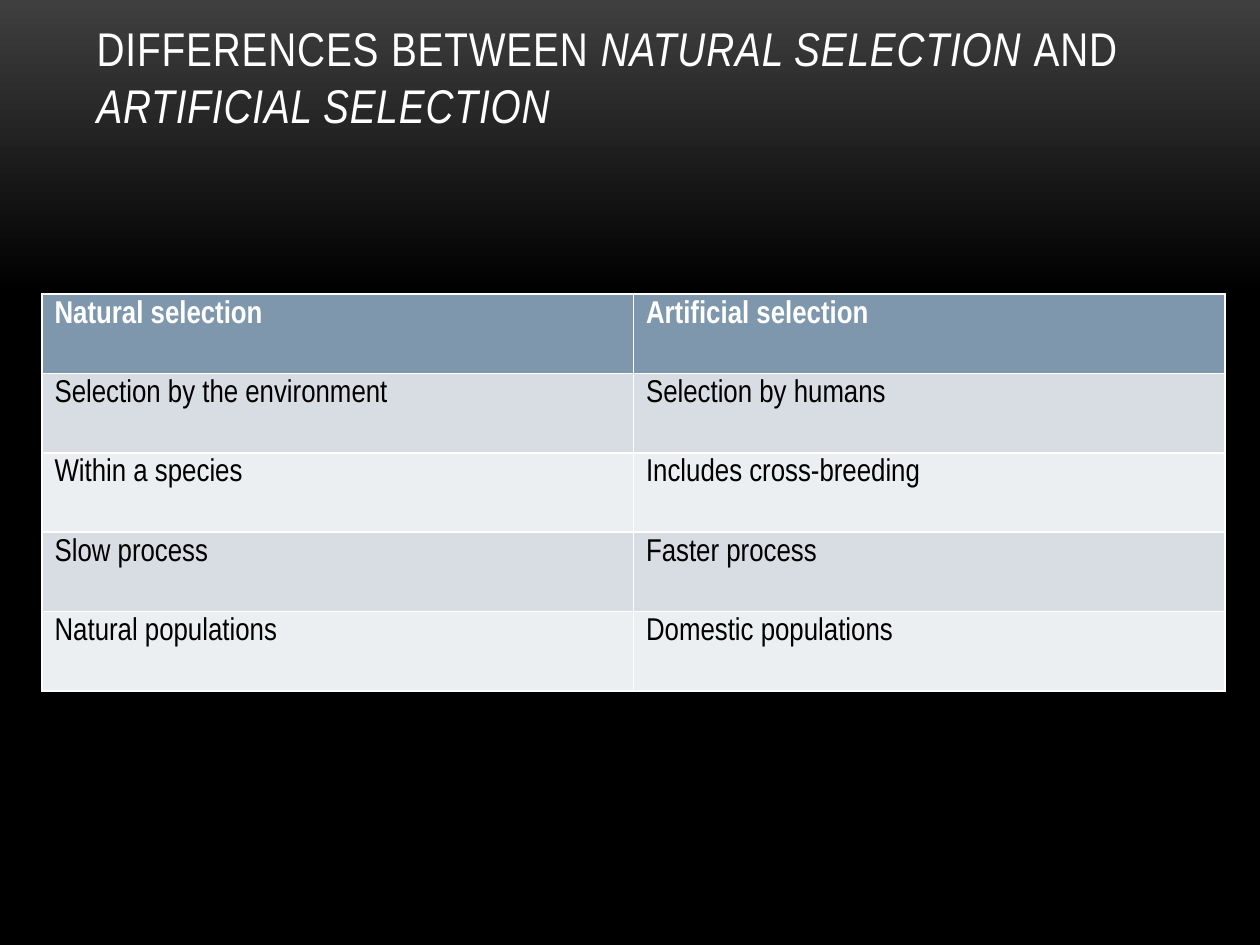
from lxml import etree
from pptx import Presentation
from pptx.dml.color import RGBColor
from pptx.enum import text
from pptx.oxml import ns
from pptx.util import Pt

TITLE = [
    ("DIFFERENCES BETWEEN ", False),
    ("NATURAL SELECTION ", True),
    ("AND ", False),
    ("ARTIFICIAL SELECTION", True),
]
ROWS = [
    ("Natural selection", "Artificial selection"),
    ("Selection by the environment", "Selection by humans"),
    ("Within a species", "Includes cross-breeding"),
    ("Slow process", "Faster process"),
    ("Natural populations", "Domestic populations"),
]

WHITE = RGBColor(0xFF, 0xFF, 0xFF)
BLACK = RGBColor(0, 0, 0)
GREY = RGBColor(0x3F, 0x3F, 0x3F)
HEADER = RGBColor(0x7E, 0x97, 0xAD)
BANDS = [RGBColor(0xEC, 0xEF, 0xF1), RGBColor(0xD8, 0xDD, 0xE3)]
FONT = "Arial Narrow"
COL_W, ROW_H = 338, 45.36


def set_all(obj, values):
    for name, value in values.items():
        setattr(obj, name, value)


def set_font(font, size, color, **values):
    set_all(font, dict(name=FONT, size=Pt(size), **values))
    font.color.rgb = color


def set_borders(cell, color, width):
    tcPr = cell._tc.get_or_add_tcPr()
    for i, side in enumerate(("lnL", "lnR", "lnT", "lnB")):
        ln = etree.Element(ns.qn(f"a:{side}"), w=str(Pt(width)))
        fill = etree.SubElement(ln, ns.qn("a:solidFill"))
        etree.SubElement(fill, ns.qn("a:srgbClr"), val=str(color))
        tcPr.insert(i, ln)


def add_background(s):
    fill = s.background.fill
    fill.gradient()
    fill.gradient_angle = 270
    for stop, (pos, color) in zip(fill.gradient_stops, [(0, GREY), (0.31, BLACK)]):
        stop.position = pos
        stop.color.rgb = color


def add_title(s):
    sp = s.shapes.title
    set_all(sp, dict(left=Pt(48), top=Pt(21.6), width=Pt(624), height=Pt(90)))
    tf = sp.text_frame
    set_all(tf, dict(
        word_wrap=True,
        auto_size=text.MSO_AUTO_SIZE.NONE,
        vertical_anchor=text.MSO_ANCHOR.BOTTOM,
        margin_bottom=Pt(35.5),
    ))
    p = tf.paragraphs[0]
    p.alignment = text.PP_ALIGN.LEFT
    for words, italic in TITLE:
        r = p.add_run()
        r.text = words
        set_font(r.font, 27, WHITE, italic=italic)
        r._r.get_or_add_rPr().set("spc", "50")


def add_comparison(s):
    n_rows, n_cols = len(ROWS), len(ROWS[0])
    table = s.shapes.add_table(n_rows, n_cols, Pt(24), Pt(168),
                               Pt(COL_W * n_cols), Pt(ROW_H * n_rows)).table
    for i, row in enumerate(ROWS):
        table.rows[i].height = Pt(ROW_H)
        header = i == 0
        for j, words in enumerate(row):
            cell = table.cell(i, j)
            cell.text = words
            cell.fill.solid()
            cell.fill.fore_color.rgb = HEADER if header else BANDS[i % 2]
            set_borders(cell, WHITE, 1)
            set_font(cell.text_frame.paragraphs[0].runs[0].font, 18,
                     WHITE if header else BLACK, bold=header)


def main():
    prs = Presentation()
    set_all(prs, dict(slide_width=Pt(720), slide_height=Pt(540)))
    s = prs.slides.add_slide(prs.slide_layouts[5])
    add_background(s)
    add_title(s)
    add_comparison(s)
    prs.save("out.pptx")


if __name__ == "__main__":
    main()
